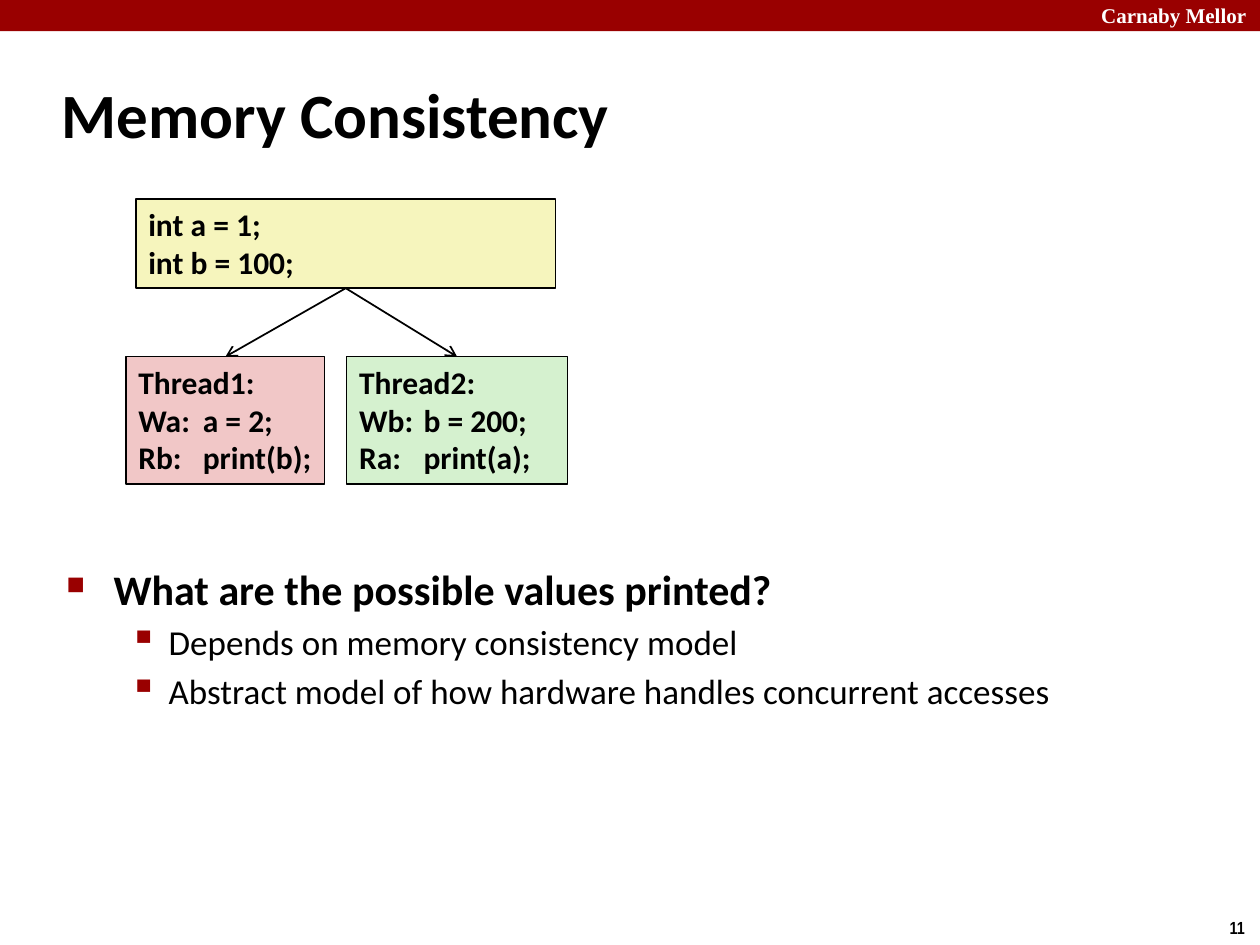
"""Build the slide on memory consistency between two threads."""
from lxml.etree import SubElement
from pptx import Presentation
from pptx.dml.color import RGBColor
from pptx.enum.shapes import MSO_CONNECTOR, MSO_SHAPE
from pptx.enum.text import MSO_ANCHOR, MSO_AUTO_SIZE, PP_ALIGN
from pptx.oxml.ns import qn
from pptx.util import Cm, Pt

COLORS = {
    "brand": "990000",
    "text": "000000",
    "white": "FFFFFF",
    "shared": "F6F5BD",
    "thread1": "F1C7C7",
    "thread2": "D5F1CF",
}


def rgb(name):
    return RGBColor.from_string(COLORS[name])


def write(tf, text, size=18, font="Calibri", color="text", bold=True, before=0,
          bullet=None, bullet_size=100, margin=0, indent=0, tab=None):
    for i, line in enumerate(text.split("\n")):
        p = tf.paragraphs[0]
        if i or p.runs:
            p = tf.add_paragraph()
        p.alignment = PP_ALIGN.LEFT
        p.space_before = Pt(before)
        r = p.add_run()
        r.text = line
        r.font.size, r.font.name, r.font.bold = Pt(size), font, bold
        r.font.color.rgb = rgb(color)
        pPr = p._p.get_or_add_pPr()
        if bullet:
            pPr.set("marL", str(Cm(margin)))
            pPr.set("indent", str(Cm(indent)))
            clr = SubElement(pPr, qn("a:buClr"))
            SubElement(clr, qn("a:srgbClr"), val=COLORS["brand"])
            SubElement(pPr, qn("a:buSzPct"), val=str(bullet_size * 1000))
            SubElement(pPr, qn("a:buChar"), char=bullet)
        if tab:
            tabs = SubElement(pPr, qn("a:tabLst"))
            SubElement(tabs, qn("a:tab"), pos=str(Cm(tab)), algn="l")


class Deck:
    """Hold the presentation style and the current slide."""

    def __init__(self, width, height):
        self.prs = Presentation()
        self.prs.slide_width, self.prs.slide_height = Cm(width), Cm(height)
        self.s = self.prs.slides.add_slide(self.prs.slide_layouts[5])

    def title(self, text, x, y, w, h):
        sp = self.s.shapes.title
        sp.left, sp.top, sp.width, sp.height = Cm(x), Cm(y), Cm(w), Cm(h)
        tf = sp.text_frame
        tf.auto_size = MSO_AUTO_SIZE.NONE
        tf.vertical_anchor = MSO_ANCHOR.MIDDLE
        write(tf, text, size=36)

    def text(self, text, x, y, w, h, wrap=True, **fmt):
        tf = self.s.shapes.add_textbox(Cm(x), Cm(y), Cm(w), Cm(h)).text_frame
        tf.word_wrap = wrap
        write(tf, text, **fmt)
        return tf

    def box(self, x, y, w, h, fill, text=None, outline=True, **fmt):
        sp = self.s.shapes.add_shape(MSO_SHAPE.RECTANGLE, Cm(x), Cm(y), Cm(w), Cm(h))
        sp.shadow.inherit = False
        sp.fill.solid()
        sp.fill.fore_color.rgb = rgb(fill)
        if outline:
            sp.line.color.rgb = rgb("text")
            sp.line.width = Pt(0.75)
        else:
            sp.line.fill.background()
        if text:
            sp.text_frame.vertical_anchor = MSO_ANCHOR.TOP
            write(sp.text_frame, text, **fmt)
        return sp

    def arrow(self, start, end):
        sp = self.s.shapes.add_connector(MSO_CONNECTOR.STRAIGHT, 0, 0, 0, 0)
        sp.begin_connect(start, 2)
        sp.end_connect(end, 0)
        sp.line.color.rgb = rgb("text")
        sp.line.width = Pt(1)
        SubElement(sp.line._get_or_add_ln(), qn("a:tailEnd"), type="arrow")
        SubElement(sp._element.spPr, qn("a:effectLst"))


def main():
    deck = Deck(25.4, 19.05)
    deck.box(0, 0, 25.4, 0.63, "brand", outline=False)
    deck.text("Carnaby Mellor", 21.95, -0.08, 3.63, 0.76, size=12,
              font="Times New Roman", color="white")
    deck.text("11", 24.54, 18.36, 0.86, 0.69, wrap=False, size=10, font="Arial Narrow")
    deck.title("Memory Consistency", 0.99, 1.22, 21.08, 2.11)

    tf = deck.text("What are the possible values printed?", 1.09, 11.23, 21.95, 8.08,
                   size=24, before=4.8, bullet="■", bullet_size=60,
                   margin=0.95, indent=-0.95)
    write(tf, "Depends on memory consistency model\n"
              "Abstract model of how hardware handles concurrent accesses",
          size=20, bold=False, before=4, bullet="▪", bullet_size=110,
          margin=2.06, indent=-0.79)

    shared = deck.box(2.74, 4.01, 8.46, 1.8, "shared", "int a = 1;\nint b = 100;")
    threads = [
        (2.54, 4.01, "thread1", "Thread1:\nWa:\ta = 2;\nRb: \tprint(b);"),
        (6.99, 4.45, "thread2", "Thread2:\nWb:\tb = 200;\nRa:\tprint(a);"),
    ]
    for x, w, fill, code in threads:
        deck.arrow(shared, deck.box(x, 7.19, w, 2.57, fill, code, tab=1.3))

    deck.prs.save("out.pptx")


if __name__ == "__main__":
    main()
